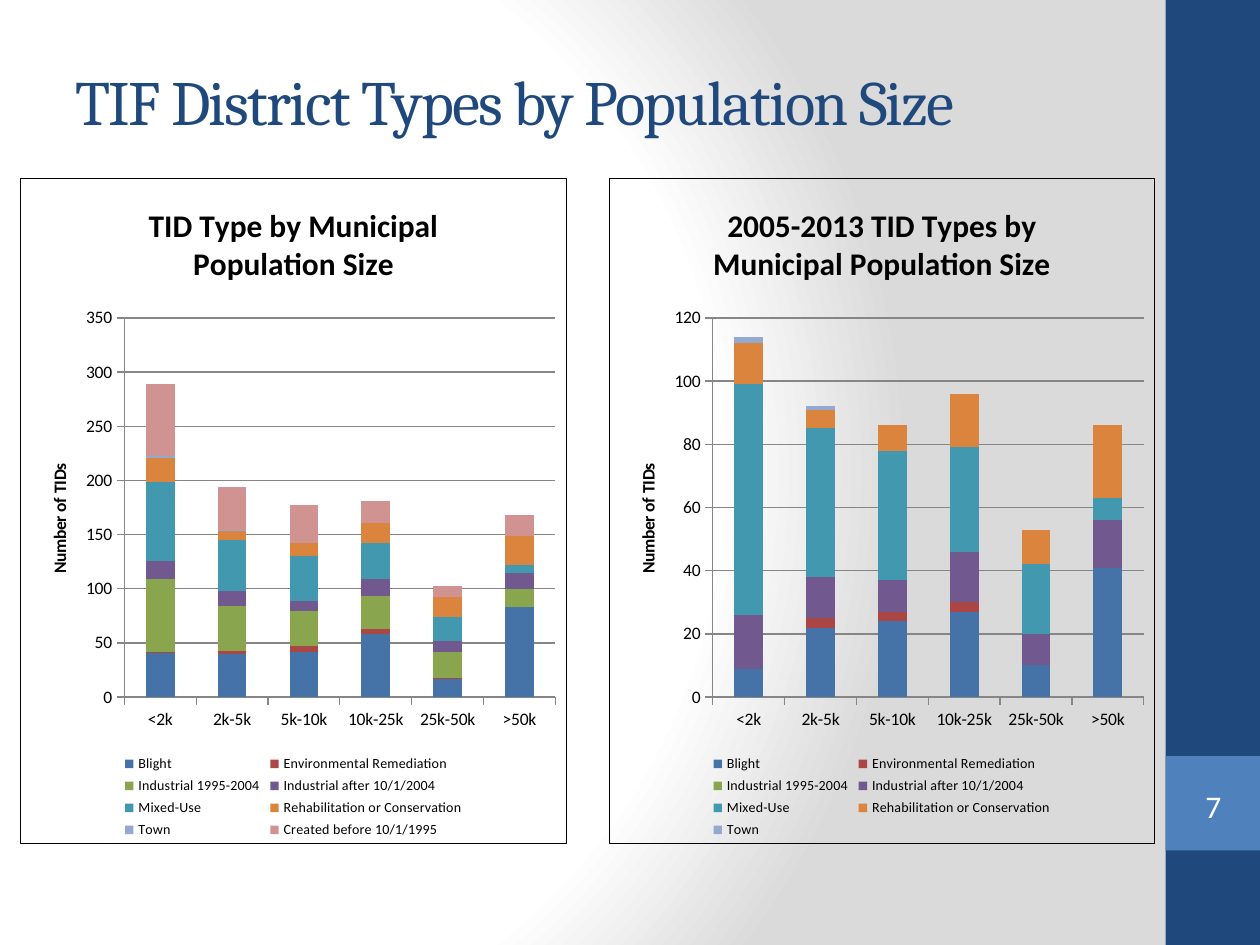
from dataclasses import dataclass

import pptx
import pptx.chart.data
import pptx.dml.color
import pptx.enum.chart
import pptx.enum.shapes
import pptx.enum.text
import pptx.oxml
import pptx.oxml.ns
import pptx.util
from pptx.util import Inches, Pt

NAVY, BLUE, WHITE, BLACK, GRAY = "1F497D", "4F81BD", "FFFFFF", "000000", "868686"
POPULATIONS = ["<2k", "2k-5k", "5k-10k", "10k-25k", "25k-50k", ">50k"]
DISTRICT_COLORS = {
    "Blight": "4572A7",
    "Environmental Remediation": "AA4643",
    "Industrial 1995-2004": "89A54E",
    "Industrial after 10/1/2004": "71588F",
    "Mixed-Use": "4198AF",
    "Rehabilitation or Conservation": "DB843D",
    "Town": "93A9CF",
    "Created before 10/1/1995": "D19392",
}
NAMESPACES = pptx.oxml.ns.nsdecls("a", "c", "p")


@dataclass
class DistrictChart:
    title: str
    left: float
    counts: list  # one row per district type, in DISTRICT_COLORS order


CHARTS = [
    DistrictChart("TID Type by Municipal Population Size", 0.16, [
        [41, 40, 42, 58, 17, 83],
        [1, 3, 5, 5, 1, None],
        [67, 41, 32, 30, 24, 17],
        [17, 14, 10, 16, 10, 15],
        [73, 47, 41, 33, 22, 7],
        [22, 8, 12, 19, 18, 27],
        [2, 1, None, None, None, None],
        [66, 40, 35, 20, 11, 19],
    ]),
    DistrictChart("2005-2013 TID Types by Municipal Population Size", 4.83, [
        [9, 22, 24, 27, 10, 41],
        [None, 3, 3, 3, None, None],
        [None, 0, None, None, None, None],
        [17, 13, 10, 16, 10, 15],
        [73, 47, 41, 33, 22, 7],
        [13, 6, 8, 17, 11, 23],
        [2, 1, None, None, None, None],
    ]),
]


def color(value: str):
    return pptx.dml.color.RGBColor.from_string(value)


def paint(fill, value: str) -> None:
    fill.solid()
    fill.fore_color.rgb = color(value)


def write(frame, text: str, *, size: float, fill: str, font="Calibri",
          bold=False, align=None, spacing=None) -> None:
    para = frame.paragraphs[0]
    para.alignment = align
    span = para.add_run()
    span.text = text
    span.font.size = Pt(size)
    span.font.name = font
    span.font.bold = bold
    span.font.color.rgb = color(fill)
    if spacing is not None:
        span.font._element.set("spc", str(spacing))


def add_block(page, kind, left, top, width, height, fill=None):
    box = page.shapes.add_shape(kind, Inches(left), Inches(top), Inches(width), Inches(height))
    box.shadow.inherit = False
    box.line.fill.background()
    if fill:
        paint(box.fill, fill)
    else:
        box.fill.background()
    return box


def set_background(page) -> None:
    """Circular gradient, white at the left and light gray at the right."""
    stops = "".join(f'<a:gs pos="{position * 1000}"><a:srgbClr val="{value}"/></a:gs>'
                    for position, value in [(0, WHITE), (75, WHITE), (100, "DADADA")])
    page.background.fill.solid()
    properties = page._element.cSld.bg.bgPr
    gradient = pptx.oxml.parse_xml(
        f'<a:gradFill {NAMESPACES} rotWithShape="1"><a:gsLst>{stops}</a:gsLst>'
        '<a:path path="circle"><a:fillToRect l="20000" t="50000" r="100000" b="50000"/>'
        '</a:path></a:gradFill>')
    properties.replace(properties[0], gradient)


def layout_xml(x, y, width, height, inner=False):
    target = '<c:layoutTarget val="inner"/>' if inner else ""
    return pptx.oxml.parse_xml(
        f'<c:layout {NAMESPACES}><c:manualLayout>{target}'
        '<c:xMode val="edge"/><c:yMode val="edge"/>'
        f'<c:x val="{x}"/><c:y val="{y}"/><c:w val="{width}"/><c:h val="{height}"/>'
        '</c:manualLayout></c:layout>')


def place_chart_parts(chart) -> None:
    plot_area = chart._chartSpace.chart.plotArea
    for old in plot_area.findall(pptx.oxml.ns.qn("c:layout")):
        plot_area.remove(old)
    plot_area.insert(0, layout_xml(0.19, 0.21, 0.79, 0.57, inner=True))
    legend = chart.legend._element
    for old in legend.findall(pptx.oxml.ns.qn("c:layout")):
        legend.remove(old)
    legend.find(pptx.oxml.ns.qn("c:legendPos")).addnext(layout_xml(0.18, 0.86, 0.64, 0.14))


def add_chart_border(chart) -> None:
    chart._chartSpace.chart.addnext(pptx.oxml.parse_xml(
        f'<c:spPr {NAMESPACES}><a:noFill/><a:ln w="{Pt(0.75)}"><a:solidFill>'
        f'<a:srgbClr val="{BLACK}"/></a:solidFill></a:ln></c:spPr>'))


def add_district_chart(page, item: DistrictChart) -> None:
    data = pptx.chart.data.CategoryChartData()
    data.categories = POPULATIONS
    for name, values in zip(DISTRICT_COLORS, item.counts):
        data.add_series(name, values)
    chart = page.shapes.add_chart(
        pptx.enum.chart.XL_CHART_TYPE.COLUMN_STACKED, Inches(item.left), Inches(1.41),
        Inches(4.34), Inches(5.29), data).chart
    chart.font.size = Pt(10)
    chart.font.name = "Calibri"
    chart.font.color.rgb = color(BLACK)
    write(chart.chart_title.text_frame, item.title, size=18, fill=BLACK, bold=True)
    chart.chart_title.include_in_layout = False

    plot = chart.plots[0]
    plot.gap_width = 150
    plot.overlap = 100
    plot.vary_by_categories = False
    for series in plot.series:
        paint(series.format.fill, DISTRICT_COLORS[series.name])

    counts = chart.value_axis
    write(counts.axis_title.text_frame, "Number of TIDs", size=10, fill=BLACK, bold=True)
    counts.has_major_gridlines = True
    for axis in (counts, chart.category_axis):
        axis.major_tick_mark = pptx.enum.chart.XL_TICK_MARK.OUTSIDE
    for line in (counts.major_gridlines.format.line, counts.format.line,
                 chart.category_axis.format.line):
        line.color.rgb = color(GRAY)
        line.width = Pt(0.75)

    chart.has_legend = True
    chart.legend.position = pptx.enum.chart.XL_LEGEND_POSITION.BOTTOM
    chart.legend.include_in_layout = False
    chart.legend.font.size = Pt(8)
    place_chart_parts(chart)
    add_chart_border(chart)


def main() -> None:
    deck = pptx.Presentation()
    deck.slide_width, deck.slide_height = Inches(10), Inches(7.5)
    page = deck.slides.add_slide(deck.slide_layouts[5])
    set_background(page)
    shapes = pptx.enum.shapes.MSO_SHAPE
    add_block(page, shapes.RECTANGLE, 9.25, 0, 0.75, 7.5, NAVY)
    add_block(page, shapes.RECTANGLE, 9.25, 6, 0.75, 0.75, BLUE)

    title = page.shapes.title
    title.left, title.top = Inches(0.5), Inches(0.17)
    title.width, title.height = Inches(8.33), Inches(1.25)
    title.text_frame.vertical_anchor = pptx.enum.text.MSO_ANCHOR.MIDDLE
    write(title.text_frame, "TIF District Types by Population Size", size=36, fill=NAVY,
          font="Cambria", align=pptx.enum.text.PP_ALIGN.LEFT, spacing=-100)

    for item in CHARTS:
        add_district_chart(page, item)

    number = add_block(page, shapes.DOUBLE_BRACKET, 9.33, 6.18, 0.6, 0.43)
    number.adjustments[0] = 0.18
    frame = number.text_frame
    frame.margin_left = frame.margin_right = frame.margin_top = frame.margin_bottom = 0
    frame.vertical_anchor = pptx.enum.text.MSO_ANCHOR.MIDDLE
    write(frame, "7", size=18, fill=WHITE, align=pptx.enum.text.PP_ALIGN.CENTER)
    deck.save("out.pptx")


if __name__ == "__main__":
    main()
